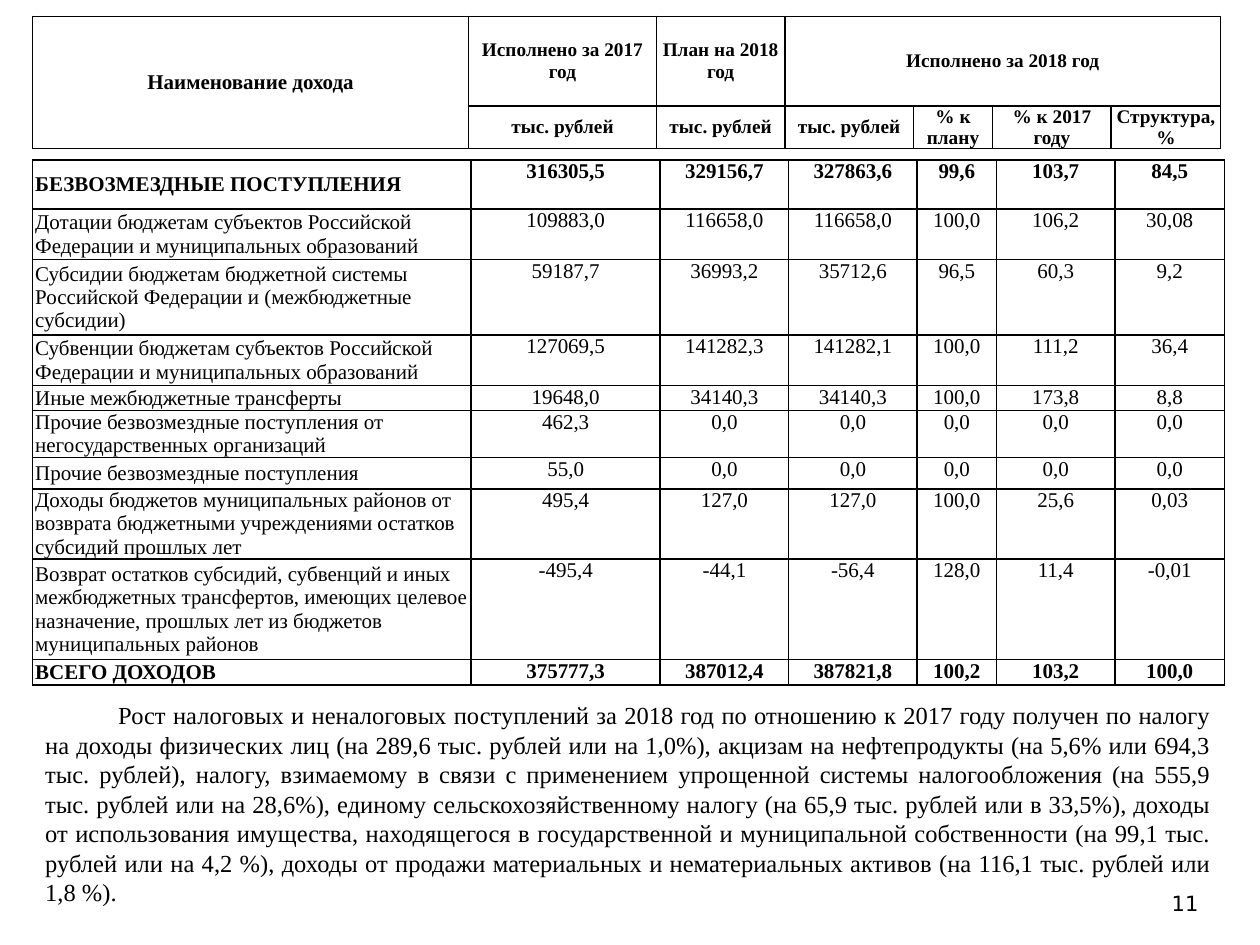
"""Build the budget revenue slide: two aligned tables, a paragraph and a page number."""
import dataclasses

import pptx
import pptx.dml.color
import pptx.enum.text
import pptx.oxml
import pptx.oxml.ns
import pptx.util


@dataclasses.dataclass(frozen=True)
class Theme:
    ink: str = "000000"
    serif: str = "Times New Roman"
    sans: str = "DejaVu Sans"
    head: int = 11
    cell: int = 12
    body: int = 14
    line: int = 1


theme = Theme()
align = pptx.enum.text.PP_ALIGN
middle = pptx.enum.text.MSO_ANCHOR.MIDDLE
deck = pptx.Presentation()
deck.slide_width = pptx.util.Inches(10)
deck.slide_height = pptx.util.Inches(7.5)
unit = deck.slide_width // 1000
slide = deck.slides.add_slide(deck.slide_layouts[6])


def write(frame, text, size, side, bold=False, face=theme.serif):
    frame.text = text
    frame.word_wrap = True
    para = frame.paragraphs[0]
    para.alignment = side
    for run in para.runs:
        run.font.size = pptx.util.Pt(size)
        run.font.bold = bold
        run.font.name = face
        run.font.color.rgb = pptx.dml.color.RGBColor.from_string(theme.ink)


def build(top, cols, rows):
    frame = slide.shapes.add_table(
        len(rows), len(cols), 26 * unit, top * unit, sum(cols) * unit, sum(rows) * unit)
    table = frame.table
    table.first_row = table.horz_banding = False
    for col, wide in zip(table.columns, cols):
        col.width = wide * unit
    for row, tall in zip(table.rows, rows):
        row.height = tall * unit
    for cell in table.iter_cells():
        cell.margin_left = cell.margin_right = 2 * unit
        cell.margin_top = cell.margin_bottom = 0
        props = cell._tc.get_or_add_tcPr()
        for edge in ("lnL", "lnR", "lnT", "lnB"):
            props.append(pptx.oxml.parse_xml(
                f'<a:{edge} {pptx.oxml.ns.nsdecls("a")} w="{pptx.util.Pt(theme.line)}">'
                f'<a:solidFill><a:srgbClr val="{theme.ink}"/></a:solidFill></a:{edge}>'))
        cell.fill.background()
    return table


tail = [102, 102, 63, 94, 87]
data = [
    (39, "БЕЗВОЗМЕЗДНЫЕ ПОСТУПЛЕНИЯ",
     "316305,5 329156,7 327863,6 99,6 103,7 84,5"),
    (40, "Дотации бюджетам субъектов Российской Федерации и муниципальных образований",
     "109883,0 116658,0 116658,0 100,0 106,2 30,08"),
    (60, "Субсидии бюджетам бюджетной системы Российской Федерации и (межбюджетные субсидии)",
     "59187,7 36993,2 35712,6 96,5 60,3 9,2"),
    (40, "Субвенции бюджетам субъектов Российской Федерации и муниципальных образований",
     "127069,5 141282,3 141282,1 100,0 111,2 36,4"),
    (20, "Иные межбюджетные трансферты",
     "19648,0 34140,3 34140,3 100,0 173,8 8,8"),
    (31, "Прочие безвозмездные поступления от негосударственных организаций",
     "462,3 0,0 0,0 0,0 0,0 0,0"),
    (25, "Прочие безвозмездные поступления",
     "55,0 0,0 0,0 0,0 0,0 0,0"),
    (46, "Доходы бюджетов муниципальных районов от возврата бюджетными учреждениями "
         "остатков субсидий прошлых лет",
     "495,4 127,0 127,0 100,0 25,6 0,03"),
    (80, "Возврат остатков субсидий, субвенций и иных межбюджетных трансфертов, имеющих "
         "целевое назначение, прошлых лет из бюджетов муниципальных районов",
     "-495,4 -44,1 -56,4 128,0 11,4 -0,01"),
    (20, "ВСЕГО ДОХОДОВ",
     "375777,3 387012,4 387821,8 100,2 103,2 100,0"),
]
sums = build(127, [348, 150] + tail, [tall for tall, name, nums in data])
for row, (tall, name, nums) in enumerate(data):
    bold = name.isupper()
    label = sums.cell(row, 0)
    label.vertical_anchor = middle
    write(label.text_frame, name, theme.cell, align.LEFT, bold)
    for col, value in enumerate(nums.split(), 1):
        cell = sums.cell(row, col)
        cell.margin_left = cell.margin_right = 7 * unit
        write(cell.text_frame, value, theme.cell, align.CENTER, bold)

titles = [
    ["Наименование дохода", "Исполнено за 2017 год", "План на 2018 год",
     "Исполнено за 2018 год"],
    ["", "тыс. рублей", "тыс. рублей", "тыс. рублей", "% к плану", "% к 2017 году",
     "Структура, %"],
]
header = build(13, [346, 149] + tail, [71, 34])
header.cell(0, 0).merge(header.cell(1, 0))
header.cell(0, 3).merge(header.cell(0, 6))
for row, names in enumerate(titles):
    for col, name in enumerate(names):
        if name:
            cell = header.cell(row, col)
            cell.vertical_anchor = middle
            size = theme.head if col else theme.cell
            write(cell.text_frame, name, size, align.CENTER, True)

story = (
    "Рост налоговых и неналоговых поступлений за 2018 год по отношению к 2017 году получен "
    "по налогу на доходы физических лиц (на 289,6 тыс. рублей или на 1,0%), акцизам на "
    "нефтепродукты (на 5,6% или 694,3 тыс. рублей), налогу, взимаемому в связи с применением "
    "упрощенной системы налогообложения (на 555,9 тыс. рублей или на 28,6%), единому "
    "сельскохозяйственному налогу (на 65,9 тыс. рублей или в 33,5%), доходы от использования "
    "имущества, находящегося в государственной и муниципальной собственности (на 99,1 тыс. "
    "рублей или на 4,2 %), доходы от продажи материальных и нематериальных активов (на 116,1 "
    "тыс. рублей или 1,8 %).")
note = slide.shapes.add_textbox(26 * unit, 551 * unit, 945 * unit, 175 * unit).text_frame
write(note, story, theme.body, align.JUSTIFY)
note.paragraphs[0]._p.get_or_add_pPr().set("indent", str(58 * unit))

page = slide.shapes.add_textbox(728 * unit, 702 * unit, 233 * unit, 42 * unit).text_frame
write(page, "11", theme.cell, align.RIGHT, face=theme.sans)

deck.save("out.pptx")
